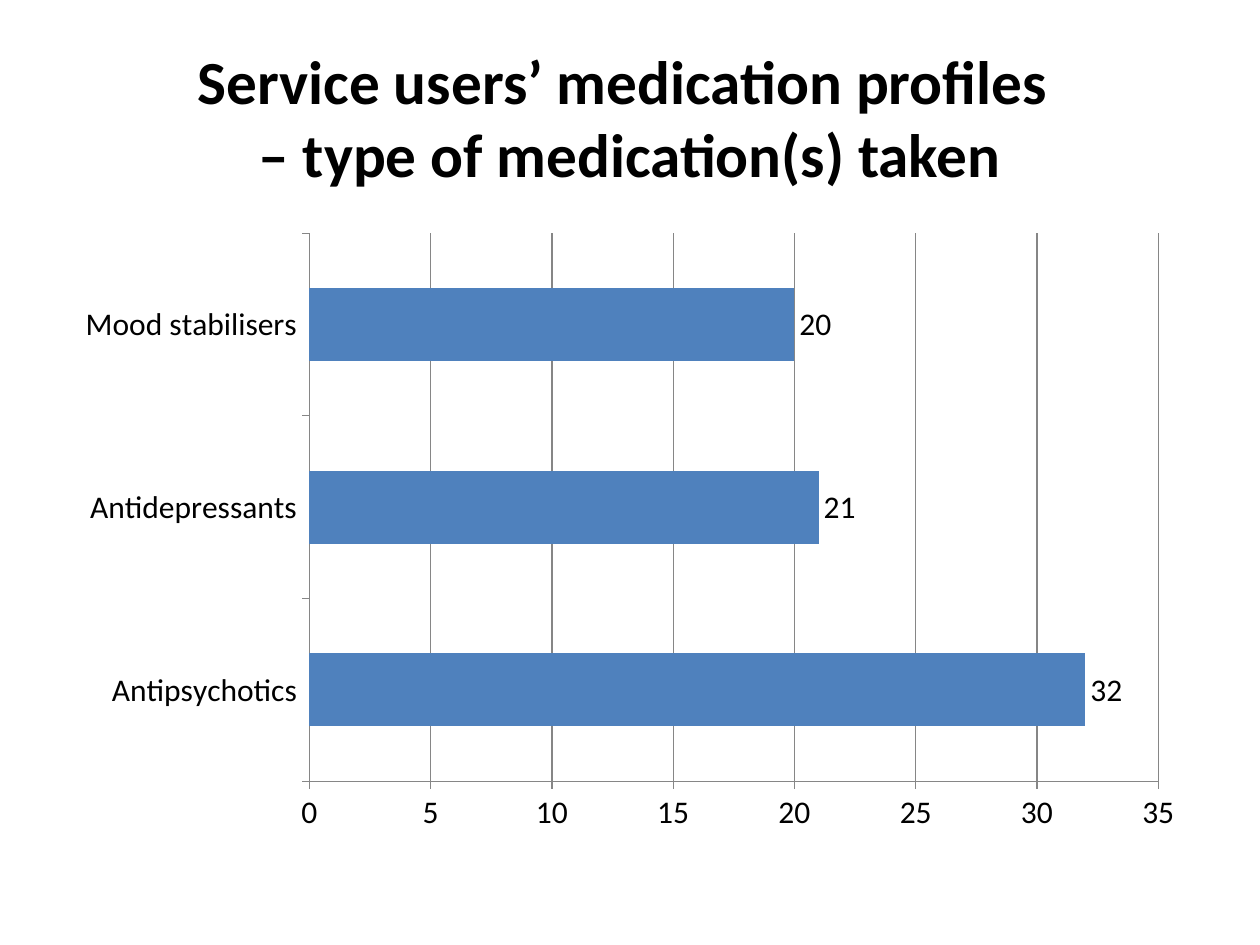
from pptx import Presentation
from pptx.chart.data import CategoryChartData
from pptx.dml.color import RGBColor
from pptx.enum.chart import XL_CHART_TYPE as ChartType
from pptx.enum.chart import XL_LABEL_POSITION as LabelPosition
from pptx.enum.chart import XL_TICK_MARK as TickMark
from pptx.enum.text import MSO_ANCHOR as Anchor
from pptx.enum.text import PP_ALIGN as Align
from pptx.util import Cm, Pt

FONT = "Calibri"
COLOURS = {"text": "000000", "bar": "4F81BD", "line": "868686", "background": "FFFFFF"}

TITLE_LINES = ["Service users’ medication profiles ", "– type of medication(s) taken"]
MEDICATIONS = {"Antipsychotics": 32, "Antidepressants": 21, "Mood stabilisers": 20}


def colour(name):
    return RGBColor.from_string(COLOURS[name])


def style_font(font, size, bold=False):
    font.name = FONT
    font.size = Pt(size)
    font.bold = bold
    font.color.rgb = colour("text")


def style_line(line):
    line.color.rgb = colour("line")
    line.width = Pt(0.75)


def add_title(slide, lines, left, top, width, height):
    shape = slide.shapes.add_textbox(left, top, width, height)
    frame = shape.text_frame
    frame.word_wrap = True
    frame.vertical_anchor = Anchor.MIDDLE
    paragraph = frame.paragraphs[0]
    paragraph.alignment = Align.CENTER
    for index, text in enumerate(lines):
        if index:
            paragraph.add_line_break()
        run = paragraph.add_run()
        run.text = text
        style_font(run.font, 35, bold=True)


def add_bar_chart(slide, values, left, top, width, height):
    data = CategoryChartData()
    data.categories = list(values)
    data.add_series("Series 1", list(values.values()))
    chart = slide.shapes.add_chart(
        ChartType.BAR_CLUSTERED, left, top, width, height, data
    ).chart
    chart.has_legend = False
    chart.has_title = False
    style_font(chart.font, 18)

    # Bars and their values
    plot = chart.plots[0]
    plot.gap_width = 150
    plot.vary_by_categories = False
    fill = plot.series[0].format.fill
    fill.solid()
    fill.fore_color.rgb = colour("bar")
    plot.has_data_labels = True
    labels = plot.data_labels
    labels.show_value = True
    labels.position = LabelPosition.OUTSIDE_END
    style_font(labels.font, 18)

    # Axes and gridlines
    for axis in (chart.category_axis, chart.value_axis):
        axis.major_tick_mark = TickMark.OUTSIDE
        axis.minor_tick_mark = TickMark.NONE
        style_line(axis.format.line)
    chart.category_axis.has_major_gridlines = False
    value_axis = chart.value_axis
    value_axis.minimum_scale = 0
    value_axis.maximum_scale = 35
    value_axis.major_unit = 5
    value_axis.has_major_gridlines = True
    style_line(value_axis.major_gridlines.format.line)


def main():
    presentation = Presentation()
    presentation.slide_width = Cm(25.4)
    presentation.slide_height = Cm(19.05)
    slide = presentation.slides.add_slide(presentation.slide_layouts[6])
    slide.background.fill.solid()
    slide.background.fill.fore_color.rgb = colour("background")

    margin = Cm(1.27)
    width = presentation.slide_width - 2 * margin
    add_title(slide, TITLE_LINES, margin, Cm(0.76), width, Cm(3.18))
    add_bar_chart(slide, MEDICATIONS, margin, Cm(4.45), width, Cm(12.57))

    presentation.save("out.pptx")


if __name__ == "__main__":
    main()
